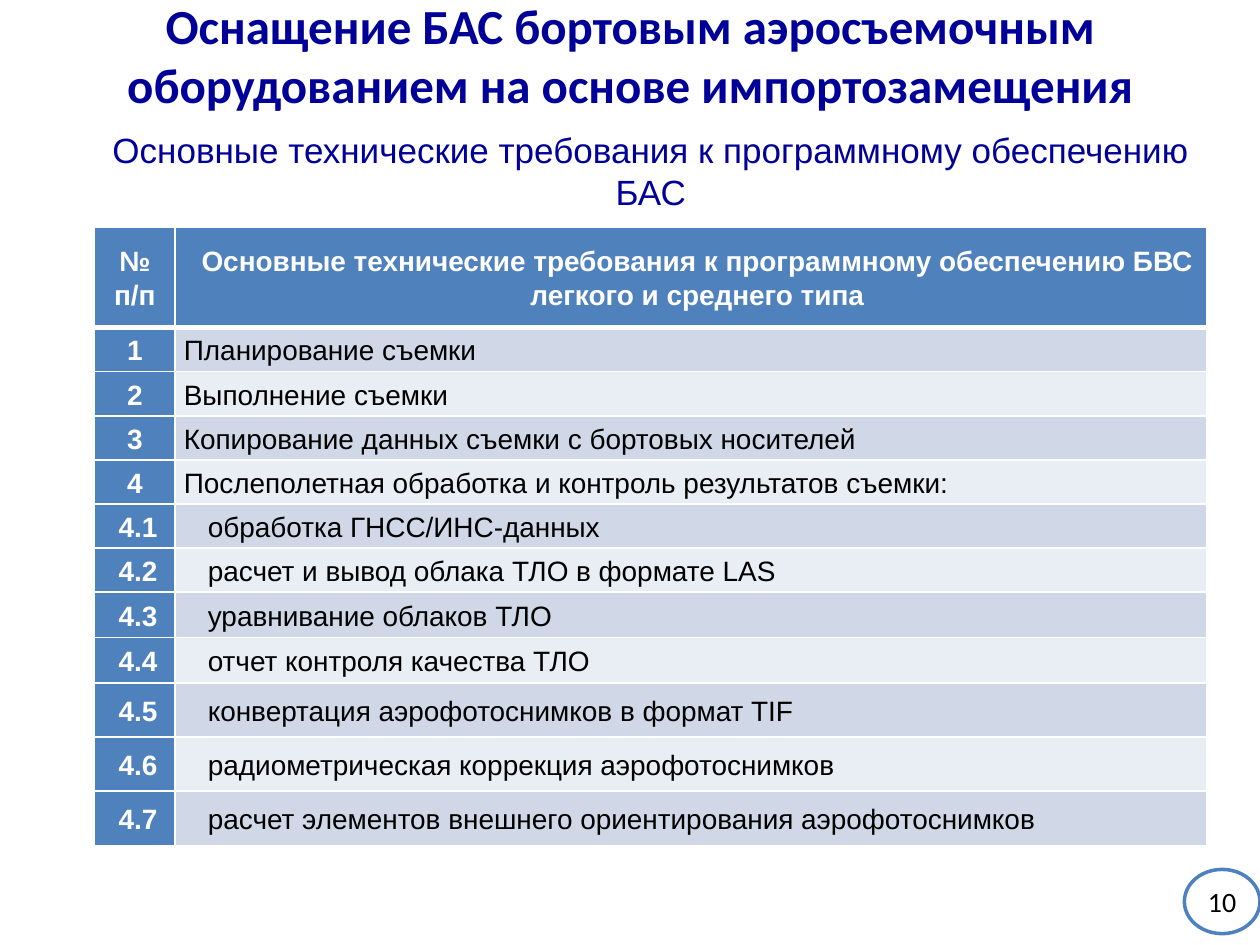
from lxml import etree
from pptx import Presentation
from pptx import util as u
from pptx.dml.color import RGBColor
from pptx.enum import shapes, text
from pptx.oxml.ns import qn

COLORS = {"navy": "000099", "blue": "4F81BD", "odd": "D0D8E8",
          "even": "E9EDF4", "white": "FFFFFF", "black": "000000"}
ALIGN = text.PP_ALIGN
HEADER = ("№ п/п", "Основные технические требования к программному обеспечению БВС\n"
                   "легкого и среднего типа")
REQUIREMENTS = [
    ("1", "Планирование съемки"),
    ("2", "Выполнение съемки"),
    ("3", "Копирование данных съемки с бортовых носителей"),
    ("4", "Послеполетная обработка и контроль результатов съемки:"),
    ("4.1", "обработка ГНСС/ИНС-данных"),
    ("4.2", "расчет и вывод облака ТЛО в формате LAS"),
    ("4.3", "уравнивание облаков ТЛО"),
    ("4.4", "отчет контроля качества ТЛО"),
    ("4.5", "конвертация аэрофотоснимков в формат TIF"),
    ("4.6", "радиометрическая коррекция аэрофотоснимков"),
    ("4.7", "расчет элементов внешнего ориентирования аэрофотоснимков"),
]
COLUMNS = (0.64, 8.19)
ROWS = [0.8] + [0.35] * 6 + [0.36] * 2 + [0.43] * 3
LEFT, WIDTH = 0.75, sum(COLUMNS)


def color(name):
    """Return the named colour."""
    return RGBColor.from_string(COLORS[name])


def write(frame, words, size, ink, font="Arial", bold=False, align=ALIGN.CENTER, spacing=None):
    """Fill a text frame and format all its runs."""
    frame.text = words
    for para in frame.paragraphs:
        para.alignment = align
        if spacing:
            para.line_spacing = spacing
        for span in para.runs:
            span.font.name, span.font.size, span.font.bold = font, u.Pt(size), bold
            span.font.color.rgb = color(ink)


def add_title(page, words):
    """Place and fill the title placeholder."""
    title = page.shapes.title
    title.left, title.top, title.width, title.height = map(u.Inches, (0.13, -0.19, 9.74, 1.25))
    write(title.text_frame, words, 28, "navy", "Calibri", True)
    title.text_frame.auto_size = text.MSO_AUTO_SIZE.NONE
    title.text_frame.vertical_anchor = text.MSO_ANCHOR.MIDDLE


def add_subtitle(page, words):
    """Add the line below the title."""
    box = page.shapes.add_textbox(*map(u.Inches, (LEFT, 0.97, WIDTH, 0.75)))
    box.text_frame.word_wrap = True
    write(box.text_frame, words, 20, "navy")


def add_page_badge(page, number):
    """Add the round page number."""
    badge = page.shapes.add_shape(shapes.MSO_SHAPE.OVAL, *map(u.Inches, (9.4, 6.9, 0.6, 0.51)))
    badge.shadow.inherit = False
    badge.fill.solid()
    badge.fill.fore_color.rgb = color("white")
    badge.line.color.rgb = color("blue")
    badge.line.width = u.Pt(2)
    badge.text_frame.word_wrap = False
    badge.text_frame.vertical_anchor = text.MSO_ANCHOR.MIDDLE
    write(badge.text_frame, number, 16, "black", "Calibri")


def add_borders(cell, **widths):
    """Draw white cell borders of the given point widths."""
    for side, width in widths.items():
        line = etree.SubElement(cell._tc.get_or_add_tcPr(), qn(f"a:ln{side}"), w=str(u.Pt(width)))
        fill = etree.SubElement(line, qn("a:solidFill"))
        etree.SubElement(fill, qn("a:srgbClr"), val=COLORS["white"])


def format_cell(cell, words, fill, ink, bold, align, left=0.07, right=0.07, top=1, bottom=1):
    """Write and style one table cell."""
    add_borders(cell, L=1, R=1, T=top, B=bottom)
    cell.fill.solid()
    cell.fill.fore_color.rgb = color(fill)
    cell.margin_left, cell.margin_right = u.Inches(left), u.Inches(right)
    cell.margin_top, cell.margin_bottom = u.Inches(0.01), 0
    cell.vertical_anchor = text.MSO_ANCHOR.MIDDLE
    write(cell.text_frame, words, 16, ink, bold=bold, align=align, spacing=1.07)


def add_requirements(page):
    """Add the table of software requirements."""
    table = page.shapes.add_table(len(ROWS), len(COLUMNS), *map(
        u.Inches, (LEFT, 1.8, WIDTH, sum(ROWS)))).table
    for column, width in zip(table.columns, COLUMNS):
        column.width = u.Inches(width)
    for row, height in zip(table.rows, ROWS):
        row.height = u.Inches(height)
    for column, (words, left) in enumerate(zip(HEADER, (0.07, 0.17))):
        format_cell(table.cell(0, column), words, "blue", "white", True, ALIGN.CENTER,
                    left=left, bottom=3)
    for row, (number, words) in enumerate(REQUIREMENTS, 1):
        nested = "." in number
        top = 3 if row == 1 else 1
        format_cell(table.cell(row, 0), number, "blue", "white", True,
                    ALIGN.RIGHT if nested else ALIGN.CENTER,
                    right=0.14 if nested else 0.07, top=top)
        format_cell(table.cell(row, 1), words, "odd" if row % 2 else "even", "black", False,
                    ALIGN.LEFT if nested else ALIGN.JUSTIFY,
                    left=0.26 if nested else 0.07, top=top)


def main():
    """Build and save the slide."""
    deck = Presentation()
    deck.slide_width, deck.slide_height = u.Inches(10), u.Inches(7.5)
    page = deck.slides.add_slide(deck.slide_layouts[5])
    add_title(page, "Оснащение БАС бортовым аэросъемочным оборудованием на основе импортозамещения")
    add_page_badge(page, "10")
    add_subtitle(page, "Основные технические требования к программному обеспечению БАС")
    add_requirements(page)
    deck.save("out.pptx")


if __name__ == "__main__":
    main()
